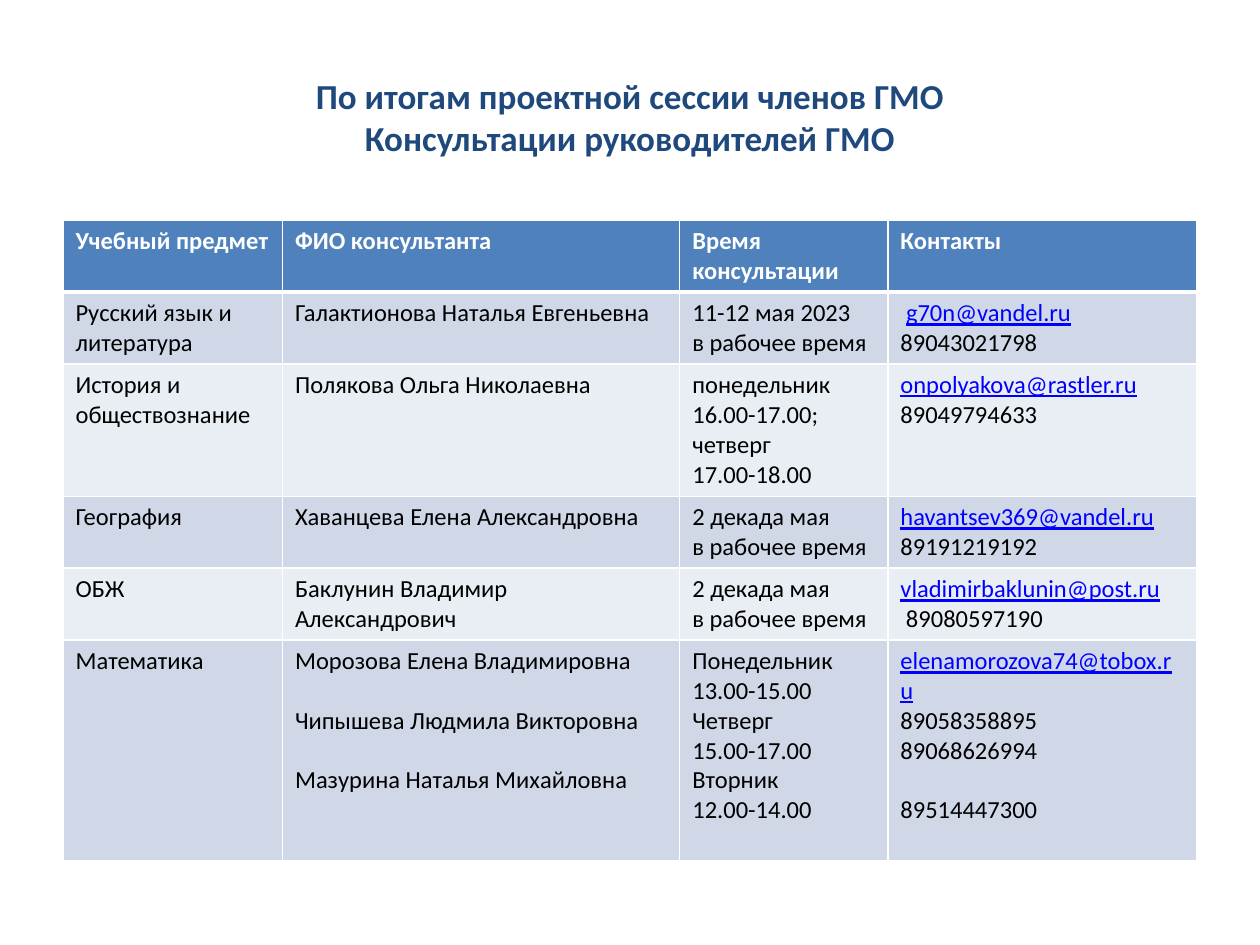
from lxml.etree import SubElement as Sub
from pptx import Presentation
from pptx.dml.color import RGBColor as Rgb
from pptx.enum.text import MSO_ANCHOR as Anchor, PP_ALIGN as Align
from pptx.oxml.ns import qn
from pptx.util import Inches, Pt

INK = {"title": "1F497D", "head": "4F81BD", "odd": "D0D8E8", "even": "E9EDF4",
       "white": "FFFFFF", "text": "000000", "link": "0000FF"}
WIDE, HIGH = Inches(10), Inches(7.5)

# Boxes as shares of the slide: left, top, width, height
TITLE_BOX = (0.05, 0.04, 0.9, 0.167)
TABLE_BOX = (0.05, 0.233, 0.9, 0.678)
COLS = (1.74, 3.15, 1.65, 2.45)
ROWS = (0.57, 0.57, 1.05, 0.57, 0.57, 1.75)

TITLE = ("По итогам проектной сессии членов ГМО", "Консультации руководителей ГМО")
GAP = ""  # the next paragraph starts one line lower
LINE = 17
WORK = "в рабочее время"
DATA = (
    (["Учебный предмет"], ["ФИО консультанта"], ["Время консультации"], ["Контакты"]),
    (["Русский язык и литература"], ["Галактионова Наталья Евгеньевна"],
     ["11-12 мая 2023", WORK], [" g70n@vandel.ru", "89043021798"]),
    (["История и обществознание"], ["Полякова Ольга Николаевна"],
     ["понедельник 16.00-17.00; четверг", "17.00-18.00"],
     ["onpolyakova@rastler.ru", "89049794633"]),
    (["География"], ["Хаванцева Елена Александровна"],
     ["2 декада мая", WORK], ["havantsev369@vandel.ru", "89191219192"]),
    (["ОБЖ"], ["Баклунин Владимир Александрович"],
     ["2 декада мая", WORK], ["vladimirbaklunin@post.ru", " 89080597190"]),
    (["Математика"],
     ["Морозова Елена Владимировна", GAP, "Чипышева Людмила Викторовна", GAP,
      "Мазурина Наталья Михайловна"],
     ["Понедельник 13.00-15.00", "Четверг", "15.00-17.00", "Вторник", "12.00-14.00"],
     ["elenamorozova74@tobox.ru", "89058358895", "89068626994", GAP, "89514447300"]),
)


def place(box):
    left, top, wide, high = box
    return int(left * WIDE), int(top * HIGH), int(wide * WIDE), int(high * HIGH)


def write(para, text, ink, **form):
    run = para.add_run()
    run.text = text
    for key, val in {"name": "Calibri", "size": Pt(14), "bold": False, **form}.items():
        setattr(run.font, key, val)
    run.font.color.rgb = Rgb.from_string(INK[ink])


def add_title(slide, box):
    frame = slide.shapes.add_textbox(*place(box)).text_frame
    frame.word_wrap, frame.vertical_anchor = True, Anchor.MIDDLE
    para = frame.paragraphs[0]
    para.alignment = Align.CENTER
    for num, line in enumerate(TITLE):
        if num:
            para.add_line_break()
        write(para, line, "title", size=Pt(20), bold=True)


def edge(cell, head, under):
    """Draw white borders, thicker between the header and the body."""
    widths = {"L": 1, "R": 1, "T": 3 if under else 1, "B": 3 if head else 1}
    props = cell._tc.get_or_add_tcPr()
    for side, width in widths.items():
        line = Sub(props, qn(f"a:ln{side}"), w=str(Pt(width)))
        Sub(Sub(line, qn("a:solidFill")), qn("a:srgbClr"), val=INK["white"])


def fill_cell(cell, lines, row):
    head = row == 0
    edge(cell, head, row == 1)
    cell.fill.solid()
    back = "head" if head else "odd" if row % 2 else "even"
    cell.fill.fore_color.rgb = Rgb.from_string(INK[back])
    frame = cell.text_frame
    para, gap = frame.paragraphs[0], False
    for num, line in enumerate(lines):
        if line == GAP:
            gap = True
            continue
        if num:
            para = frame.add_paragraph()
        if gap:
            para.space_before, gap = Pt(LINE), False
        if "@" in line:
            mail = line.strip()
            if mail != line:
                write(para, line[0], "text")
            write(para, mail, "link", underline=True)
        else:
            write(para, line, "white" if head else "text", bold=head)


def add_plan(slide, box):
    spot = place(box)
    table = slide.shapes.add_table(len(ROWS), len(COLS), *spot).table
    for col, part in zip(table.columns, COLS):
        col.width = int(spot[2] * part / sum(COLS))
    for row, part in zip(table.rows, ROWS):
        row.height = int(spot[3] * part / sum(ROWS))
    for row, cells in enumerate(DATA):
        for col, lines in enumerate(cells):
            fill_cell(table.cell(row, col), lines, row)


def main():
    deck = Presentation()
    deck.slide_width, deck.slide_height = WIDE, HIGH
    slide = deck.slides.add_slide(deck.slide_layouts[6])
    add_title(slide, TITLE_BOX)
    add_plan(slide, TABLE_BOX)
    deck.save("out.pptx")


if __name__ == "__main__":
    main()
